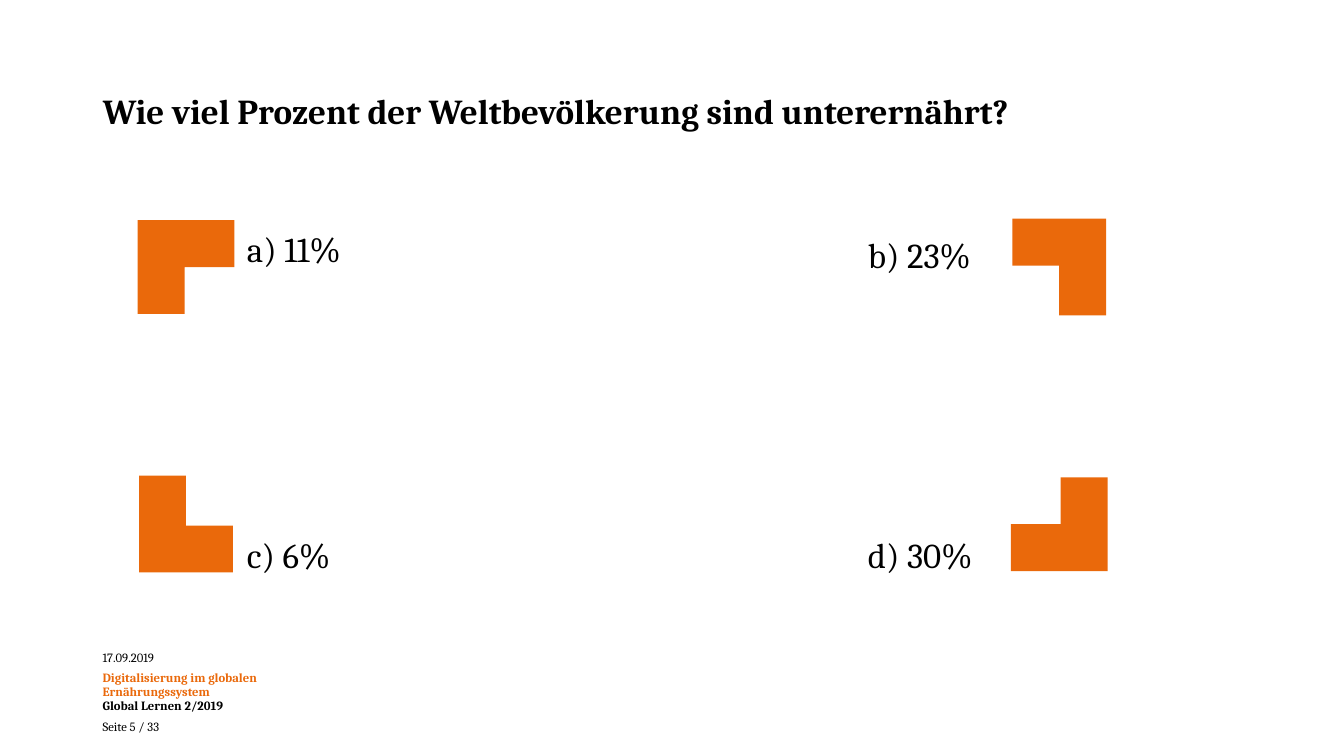
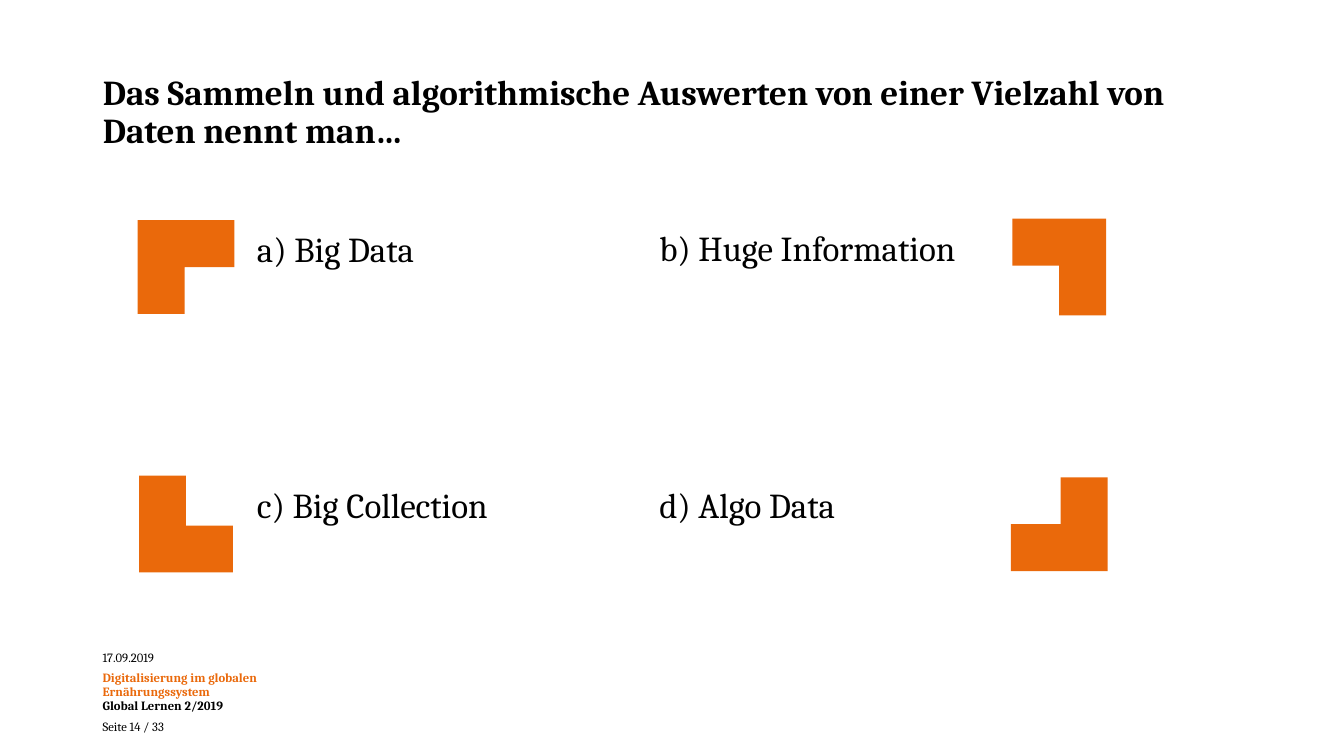
from pptx import Presentation
from pptx.dml.color import RGBColor
from pptx.enum.shapes import MSO_SHAPE
from pptx.enum.text import MSO_ANCHOR, MSO_AUTO_SIZE, PP_ALIGN
from pptx.util import Inches, Pt

CORNER = MSO_SHAPE.CORNER
LEFT = PP_ALIGN.LEFT
TOP, MIDDLE = MSO_ANCHOR.TOP, MSO_ANCHOR.MIDDLE
NO_AUTOFIT = MSO_AUTO_SIZE.NONE

FONT = "Cambria"
BLACK, ORANGE = "000000", "EA690B"
TITLE_LAYOUT = 5
PAGE_COUNT = 33


def rgb(color):
    return RGBColor.from_string(color)


def add_text(paragraph, text, size, color=BLACK, bold=False, line_spacing=1.0):
    paragraph.alignment = LEFT
    paragraph.line_spacing = line_spacing
    run = paragraph.add_run()
    run.text = text
    run.font.name = FONT
    run.font.size = Pt(size)
    run.font.bold = bold
    run.font.color.rgb = rgb(color)


# Corner brackets: left, top, rotation
brackets = [
    (1.38, 2.17, 90),
    (10.04, 2.17, 180),
    (1.38, 4.72, 0),
    (10.04, 4.72, 270),
]

# Questions: page, title, answers with left and top
questions = [
    (5, "Wie viel Prozent der Weltbevölkerung sind unterernährt?", [
        ("a) 11%", 2.35, 2.18),
        ("b) 23%", 8.51, 2.24),
        ("c) 6%", 2.35, 5.21),
        ("d) 30%", 8.51, 5.21),
    ]),
    (14, "Das Sammeln und algorithmische Auswerten von einer Vielzahl von "
         "Daten nennt man…", [
        ("a) Big Data", 2.45, 2.18),
        ("b) Huge Information", 6.44, 2.17),
        ("c) Big Collection", 2.45, 4.72),
        ("d) Algo Data", 6.44, 4.72),
    ]),
]

prs = Presentation()
prs.slide_width = Inches(13.33)
prs.slide_height = Inches(7.5)

for page, question, answers in questions:
    slide = prs.slides.add_slide(prs.slide_layouts[TITLE_LAYOUT])

    # Title
    title = slide.shapes.title
    title.left, title.top = Inches(0.92), Inches(0.4)
    title.width, title.height = Inches(11.5), Inches(1.45)
    title.text_frame.auto_size = NO_AUTOFIT
    title.text_frame.vertical_anchor = MIDDLE
    add_text(title.text_frame.paragraphs[0], question, 25, bold=True,
             line_spacing=0.9)

    # Footer: text, colour, bold, space after
    footer_lines = [
        ("17.09.2019", BLACK, False, 4.5),
        ("Digitalisierung im globalen Ernährungssystem", ORANGE, True, 0),
        ("Global Lernen 2/2019", BLACK, True, 4.5),
        (f"Seite {page} / {PAGE_COUNT}", BLACK, False, 0),
    ]
    footer = slide.shapes.add_textbox(
        Inches(0.92), Inches(6.41), Inches(2.6), Inches(0.95)).text_frame
    footer.word_wrap = True
    for index, (text, color, bold, space_after) in enumerate(footer_lines):
        paragraph = footer.add_paragraph() if index else footer.paragraphs[0]
        paragraph.space_after = Pt(space_after)
        add_text(paragraph, text, 9, color, bold, line_spacing=Pt(10))

    # Corner brackets around the answers
    for left, top, rotation in brackets:
        bracket = slide.shapes.add_shape(
            CORNER, Inches(left), Inches(top), Inches(0.93), Inches(0.96))
        bracket.rotation = rotation
        bracket.shadow.inherit = False
        bracket.fill.solid()
        bracket.fill.fore_color.rgb = rgb(ORANGE)
        bracket.line.fill.background()

    # Answers
    for text, left, top in answers:
        answer = slide.shapes.add_textbox(
            Inches(left), Inches(top), Inches(4.21), Inches(1.3)).text_frame
        answer.word_wrap = True
        answer.vertical_anchor = TOP
        add_text(answer.paragraphs[0], text, 25, line_spacing=1.07)

prs.save("out.pptx")
